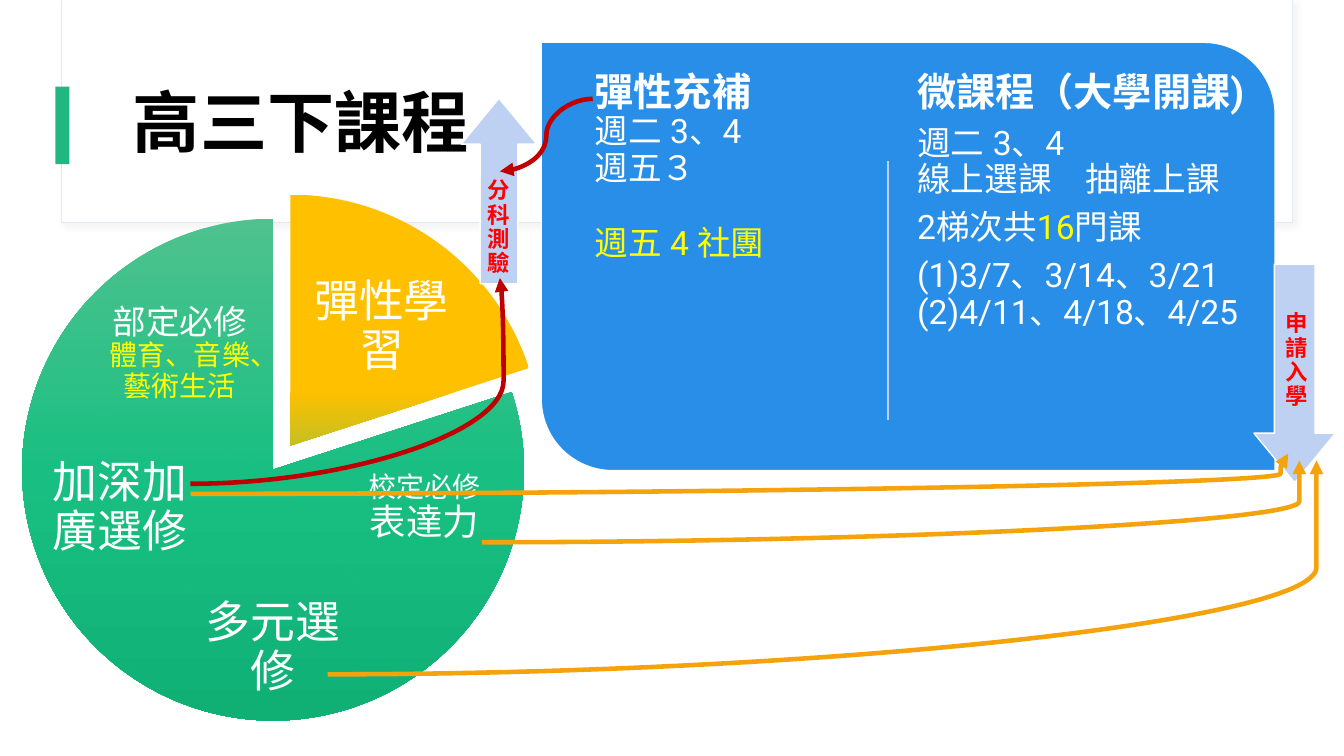
from pptx import Presentation
from pptx.dml.color import RGBColor
from pptx.enum.shapes import MSO_CONNECTOR, MSO_SHAPE
from pptx.enum.text import MSO_ANCHOR, PP_ALIGN
from pptx.oxml import parse_xml
from pptx.oxml.ns import nsdecls, qn
from pptx.util import Pt
from lxml.etree import SubElement
from copy import deepcopy

WHITE = RGBColor(0xFF, 0xFF, 0xFF)
BLACK = RGBColor(0, 0, 0)
RED = RGBColor(0xFF, 0, 0)
YELLOW = RGBColor(0xFF, 0xFF, 0)
EDGE = RGBColor(0xE3, 0xE9, 0xEF)
MARK = RGBColor(0x21, 0xB7, 0x80)
BLUE = RGBColor(0x29, 0x8E, 0xE7)
PALE = RGBColor(0xBE, 0xD1, 0xF3)
GOLD = RGBColor(0xFF, 0xC0, 0)
LIGHT = RGBColor(0x4F, 0xC2, 0x8F)
GREEN = RGBColor(0x19, 0xBF, 0x82)
DARK = RGBColor(0x10, 0xB0, 0x75)
WINE = RGBColor(0xC0, 0, 0)
AMBER = RGBColor(0xF5, 0xA3, 0x0C)

deck = Presentation()
deck.slide_width, deck.slide_height = Pt(960), Pt(540)
slide = deck.slides.add_slide(deck.slide_layouts[6])


def draw(kind, box, fill=None, line=None, width=1, adj=(), turn=0):
    shape = slide.shapes.add_shape(kind, *map(Pt, box))
    shape.shadow.inherit = False
    shape.rotation = turn
    for i, value in enumerate(adj):
        shape.adjustments[i] = value
    if fill:
        shape.fill.solid()
        shape.fill.fore_color.rgb = fill
    if line:
        shape.line.color.rgb = line
        shape.line.width = Pt(width)
    else:
        shape.line.fill.background()
    return shape


def write(box, paras, anchor=MSO_ANCHOR.MIDDLE, align=PP_ALIGN.CENTER, inset=2.9, turn=0, flow=None):
    shape = slide.shapes.add_textbox(*map(Pt, box))
    shape.rotation = turn
    frame = shape.text_frame
    look = dict(word_wrap=True, vertical_anchor=anchor, margin_left=Pt(inset),
                margin_right=Pt(inset), margin_top=Pt(inset), margin_bottom=Pt(inset))
    for name, value in look.items():
        setattr(frame, name, value)
    if flow:
        shape.element.txBody.bodyPr.set("vert", flow)
    for i, (lead, runs) in enumerate(paras):
        para = frame.add_paragraph() if i else frame.paragraphs[0]
        look = dict(alignment=align, line_spacing=0.9, space_before=Pt(lead),
                    space_after=Pt(8.4 if i < len(paras) - 1 else 0))
        for name, value in look.items():
            setattr(para, name, value)
        for words, size, color, bold, face in runs:
            for j, part in enumerate(words.split("\n")):
                if j:
                    para.add_line_break()
                if not part:
                    continue
                run = para.add_run()
                run.text = part
                for name, value in dict(size=Pt(size), bold=bold, name=face).items():
                    setattr(run.font, name, value)
                run.font.color.rgb = color
                SubElement(run.font._element, qn("a:ea")).set("typeface", "Roboto")


sheet = draw(MSO_SHAPE.RECTANGLE, (44, 0, 879, 159), WHITE, EDGE, 0.75)
glow = sheet.element.spPr.find(qn("a:effectLst"))
glow.append(parse_xml(
    f'<a:outerShdw {nsdecls("a")} blurRad="50800" dist="38100" dir="2700000">'
    '<a:srgbClr val="D9D9D9"><a:alpha val="30000"/></a:srgbClr></a:outerShdw>'))
draw(MSO_SHAPE.RECTANGLE, (44.6, 0, 878.4, 158.4), WHITE)
draw(MSO_SHAPE.RECTANGLE, (39.6, 61.9, 10.1, 55.4), MARK)
write((87.8, 43.2, 800.6, 92.9), [(0, [("高三下課程", 48, BLACK, True, "Roboto")])],
      align=PP_ALIGN.LEFT, inset=7.2)

warm = [(0.39, GOLD), (0.81, GREEN), (1, DARK)]
cool = [(0, LIGHT), (0.5, GREEN), (1, DARK)]
START, STEP = 32.4, 43.2
parts = [
    (28.1, 139, 162, 205.2, warm, (211.7, 192.2, 121.7, 83.5),
     [("彈性學習", 32, WHITE, False, "Roboto")]),
    (15.8, 156.2, 205.2, START, cool, (249.8, 318.2, 106.6, 90),
     [("校定必修\n", 20, WHITE, False, "Roboto"), ("表達力", 26, WHITE, False, "Roboto")]),
    (15.8, 156.2, START, START + STEP, cool, (131, 424.8, 128.2, 77),
     [("多元選修", 32, WHITE, False, "Roboto")]),
    (15.8, 156.2, START + STEP, START + 2 * STEP, cool, (32.4, 318.2, 106.6, 90),
     [("加深加廣選修", 32, WHITE, False, "Roboto")]),
    (15.8, 156.2, START + 2 * STEP, START + 3 * STEP, cool, (67.7, 211, 121.7, 83.5),
     [("部定必修\n", 24, WHITE, False, "Roboto"),
      ("體育、音樂、藝術生活", 20, YELLOW, False, "Noto Sans CJK SC")]),
]
for left, top, first, last, shades, box, runs in parts:
    pie = draw(MSO_SHAPE.PIE, (left, top, 358.5, 358.5), adj=(first, last))
    pie.fill.gradient()
    pie.fill.gradient_angle = 270
    stops = pie.element.spPr.find(qn("a:gradFill")).find(qn("a:gsLst"))
    stops.append(deepcopy(stops[-1]))
    for stop, (place, color) in zip(pie.fill.gradient_stops, shades):
        stop.position = place
        stop.color.rgb = color
    write(box, [(0, runs)])

draw(MSO_SHAPE.ROUND_2_DIAG_RECTANGLE, (386.6, 30.2, 524.2, 306), BLUE, WHITE, adj=(0, 0.167))
rule = slide.shapes.add_connector(MSO_CONNECTOR.STRAIGHT, Pt(634.3), Pt(115.2), Pt(634.3), Pt(300.2))
rule.line.color.rgb = PALE
rule.line.width = Pt(1)
SubElement(rule.element.spPr, qn("a:effectLst"))

write((416.2, 43.2, 182.9, 277.9), [
    (0, [("彈性充補\n", 28, WHITE, True, "Roboto"), ("週二 3、4\n週五３", 24, WHITE, False, "Roboto")]),
    (19.5, [("週五 4 社團", 24, YELLOW, False, "Roboto")]),
], MSO_ANCHOR.TOP, PP_ALIGN.LEFT, 8.6)
write((646.6, 43.2, 273.6, 321.8), [
    (0, [("微課程（大學開課)", 28, WHITE, True, "Roboto")]),
    (0, [("週二 3、4\n線上選課　抽離上課", 24, WHITE, False, "Roboto")]),
    (0, [("2梯次共", 24, WHITE, False, "Roboto"), ("16", 24, YELLOW, False, "Roboto"),
         ("門課", 24, WHITE, False, "Roboto")]),
    (0, [("(1)3/7、3/14、3/21\n(2)4/11、4/18、4/25", 24, WHITE, False, "Roboto")]),
], MSO_ANCHOR.TOP, PP_ALIGN.LEFT, 8.6)

exams = [
    ((290.2, 109.4, 132.5, 54), (298.1, 131, 115.9, 26.6), 270, "vert", MSO_ANCHOR.BOTTOM, "分科測驗"),
    ((846.7, 237.6, 156.2, 58.3), (855.4, 243.4, 139, 28.8), 90, "vert270", MSO_ANCHOR.MIDDLE, "申請入學"),
]
for arrow, box, turn, flow, anchor, words in exams:
    draw(MSO_SHAPE.RIGHT_ARROW, arrow, PALE, WHITE, adj=(0.498, 0.607), turn=turn)
    write(box, [(0, [(words, 16, RED, True, "Roboto")])], anchor, PP_ALIGN.RIGHT, 5, turn, flow)

curves = [
    (136.1, 345.6, 357.1, 198.7, WINE, 101200),
    (136.1, 352.8, 920.2, 324, AMBER, 99300),
    (234, 481.7, 940.3, 329, AMBER, 100000),
    (344.2, 387.4, 928.1, 329, AMBER, 100000),
    (423.4, 70.6, 357.1, 122.4, WINE, 50000),
]
for *ends, color, bend in curves:
    curve = slide.shapes.add_connector(MSO_CONNECTOR.CURVE, *map(Pt, ends))
    curve.line.color.rgb = color
    curve.line.width = Pt(3.25)
    props = curve.element.spPr
    SubElement(props.find(qn("a:ln")), qn("a:tailEnd")).set("type", "triangle")
    SubElement(props, qn("a:effectLst"))
    guide = SubElement(props.find(qn("a:prstGeom")).find(qn("a:avLst")), qn("a:gd"))
    guide.set("name", "adj1")
    guide.set("fmla", f"val {bend}")

deck.save("out.pptx")
